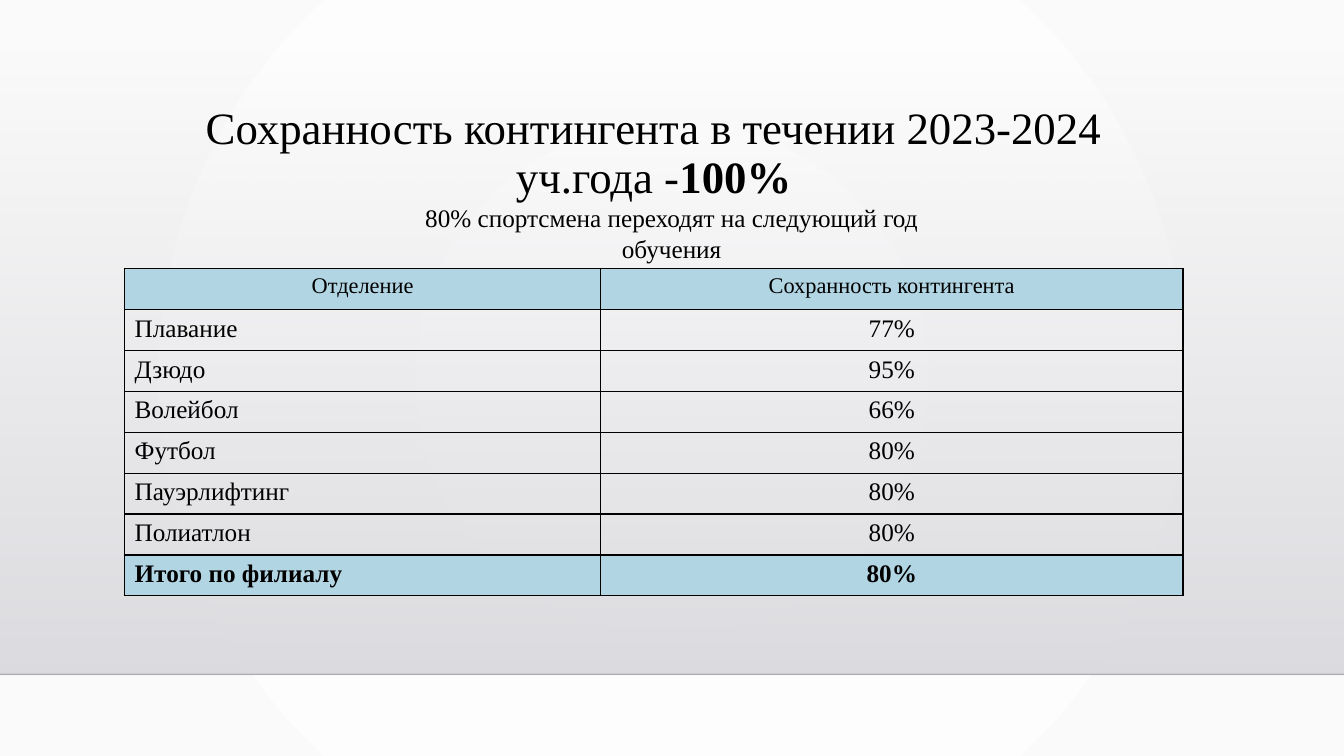
from lxml import etree
from pptx import Presentation
from pptx.dml.color import RGBColor
from pptx.enum import shapes, text
from pptx.oxml import ns
from pptx.util import Pt

BLACK = RGBColor(0, 0, 0)
WHITE = RGBColor(255, 255, 255)
PALE = RGBColor(0xFA, 0xFA, 0xFA)
GREY_TOP = RGBColor(0xDC, 0xDC, 0xE0)
GREY_BOTTOM = RGBColor(0xDA, 0xDA, 0xDE)
BLUE = RGBColor(0xB2, 0xD5, 0xE3)
FONT = "Times New Roman"

HEADER = ("Отделение", "Сохранность контингента")
RESULTS = [
    ("Плавание", "77%"),
    ("Дзюдо", "95%"),
    ("Волейбол", "66%"),
    ("Футбол", "80%"),
    ("Пауэрлифтинг", "80%"),
    ("Полиатлон", "80%"),
]
TOTAL = ("Итого по филиалу", "80%")


def add_xml(parent, tag, **attrs):
    return etree.SubElement(parent, ns.qn(tag), attrs)


def set_opacity(color_el, percent):
    add_xml(color_el, "a:alpha", val=str(percent * 1000))


def set_gradient(fill, *colors):
    fill.gradient()
    for stop, color in zip(fill.gradient_stops, colors):
        stop.color.rgb = color


def set_font(p, size, bold=None):
    p.font.name = FONT
    p.font.size = Pt(size)
    p.font.color.rgb = BLACK
    p.font.bold = bold


def add_background(slide):
    fill = slide.background.fill
    set_gradient(fill, WHITE, PALE)
    grad = next(slide.background._cSld.iter(ns.qn("a:gradFill")))
    grad.remove(grad.find(ns.qn("a:lin")))
    path = add_xml(grad, "a:path", path="circle")
    add_xml(path, "a:fillToRect", l="50000", t="50000", r="50000", b="50000")


def add_wall(slide):
    sp = slide.shapes.add_shape(
        shapes.MSO_SHAPE.RECTANGLE, 0, Pt(36.7), Pt(960), Pt(445))
    sp.shadow.inherit = False
    set_gradient(sp.fill, GREY_TOP, GREY_BOTTOM)
    sp.fill.gradient_angle = 270
    set_opacity(next(sp._element.iter(ns.qn("a:srgbClr"))), 0)
    sp.line.fill.background()


def add_floor_line(slide, y):
    line = slide.shapes.add_connector(
        shapes.MSO_CONNECTOR.STRAIGHT, 0, y, Pt(960), y)
    line.line.width = Pt(1)
    line.line.color.rgb = BLACK
    set_opacity(next(line._element.iter(ns.qn("a:srgbClr"))), 20)
    add_xml(line._element.spPr, "a:effectLst")


def add_text(slide, box, runs, size, anchor, spacing=None):
    tf = slide.shapes.add_textbox(*map(Pt, box)).text_frame
    tf.word_wrap = True
    tf.vertical_anchor = anchor
    p = tf.paragraphs[0]
    p.alignment = text.PP_ALIGN.CENTER
    p.line_spacing = spacing
    set_font(p, size)
    for words, bold in runs:
        r = p.add_run()
        r.text = words
        if bold:
            r.font.bold = True


def add_borders(cell):
    tc_pr = cell._tc.get_or_add_tcPr()
    for i, side in enumerate(("a:lnL", "a:lnR", "a:lnT", "a:lnB")):
        ln = etree.Element(ns.qn(side), w=str(Pt(1)))
        add_xml(add_xml(ln, "a:solidFill"), "a:srgbClr", val=str(BLACK))
        tc_pr.insert(i, ln)


def fill_cell(cell, words, size, bold, align, color):
    p = cell.text_frame.paragraphs[0]
    p.text = words
    p.alignment = align
    set_font(p, size, bold)
    if color:
        cell.fill.solid()
        cell.fill.fore_color.rgb = color
    else:
        cell.fill.background()
    add_borders(cell)


def add_results(slide):
    rows = [HEADER, *RESULTS, TOTAL]
    widths = (340, 416)
    row_height = 29.2
    table = slide.shapes.add_table(
        len(rows), 2, Pt(89), Pt(192), Pt(sum(widths)),
        Pt(row_height * len(rows))).table
    table.first_row = False
    table.horz_banding = False
    for col, width in zip(table.columns, widths):
        col.width = Pt(width)
    for i, row in enumerate(rows):
        table.rows[i].height = Pt(row_height)
        header, total = row is HEADER, row is TOTAL
        for j, words in enumerate(row):
            centred = header or j == 1
            align = text.PP_ALIGN.CENTER if centred else text.PP_ALIGN.LEFT
            fill_cell(table.cell(i, j), words, 16 if header else 18, total,
                      align, BLUE if header or total else None)


def main():
    prs = Presentation()
    prs.slide_width, prs.slide_height = Pt(960), Pt(540)
    slide = prs.slides.add_slide(prs.slide_layouts[6])
    add_background(slide)
    add_wall(slide)
    add_floor_line(slide, Pt(481.7))
    add_text(slide, (89, 69, 756, 83),
             [("Сохранность контингента в течении 2023-2024 уч.года -", False),
              ("100%", True)], 32, text.MSO_ANCHOR.MIDDLE, 0.9)
    add_results(slide)
    add_text(slide, (260.5, 141.3, 438.5, 51),
             [("80% спортсмена переходят на следующий год обучения", False)],
             18, text.MSO_ANCHOR.TOP)
    prs.save("out.pptx")


if __name__ == "__main__":
    main()
